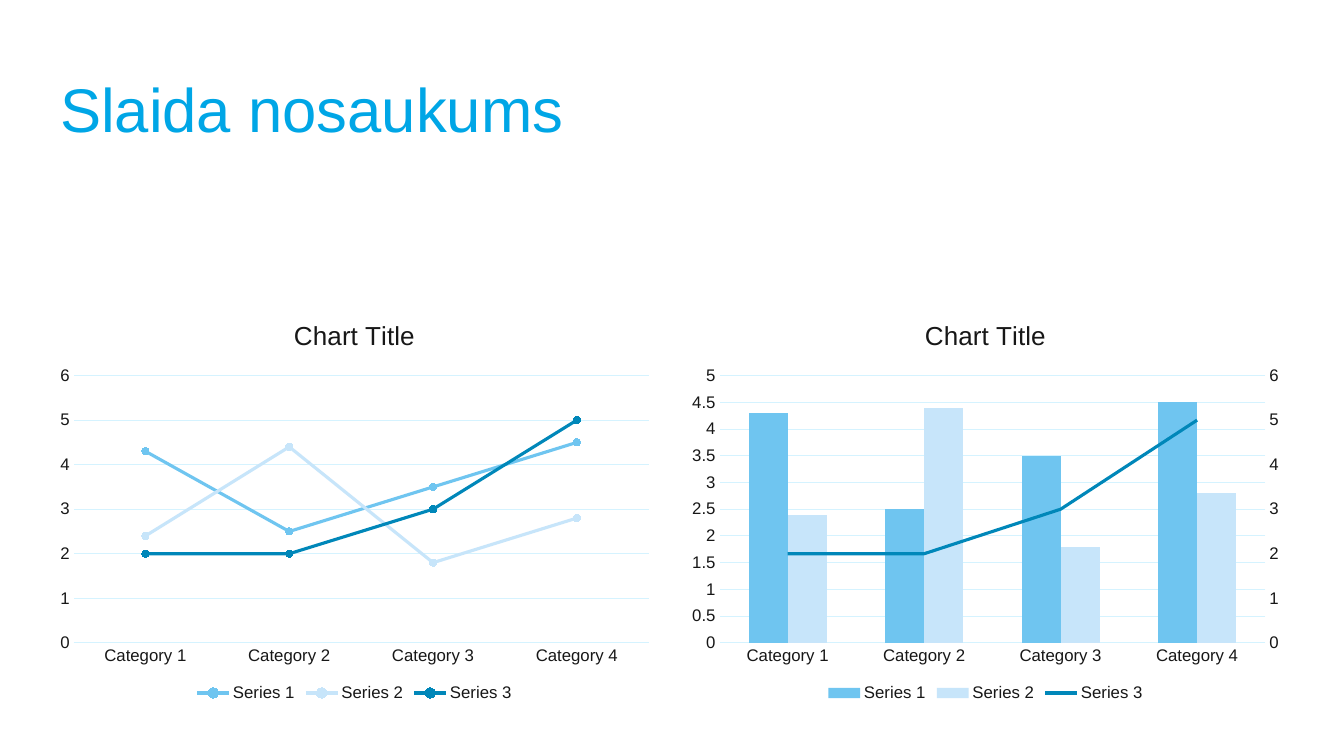
from copy import deepcopy

from lxml import etree
from pptx import Presentation
from pptx.chart.axis import CategoryAxis, ValueAxis
from pptx.chart.data import CategoryChartData
from pptx.dml.color import RGBColor
from pptx.enum.chart import XL_CHART_TYPE as CT
from pptx.enum.chart import XL_LEGEND_POSITION as LP
from pptx.enum.chart import XL_MARKER_STYLE as MS
from pptx.enum.chart import XL_TICK_MARK as TM
from pptx.enum.text import MSO_ANCHOR, PP_ALIGN
from pptx.oxml.ns import qn
from pptx.util import Pt

PX = 914400 / 100.8
FONT = "Arial"
COLORS = {"title": "00A6E6", "text": "171717", "grid": "D5F3FF"}
SERIES = {
    "Series 1": ("6FC5F0", (4.3, 2.5, 3.5, 4.5)),
    "Series 2": ("C7E5FA", (2.4, 4.4, 1.8, 2.8)),
    "Series 3": ("0087B9", (2, 2, 3, 5)),
}


def px(*lengths):
    return [round(n * PX) for n in lengths]


def put_text(tf, text, size, color, align=PP_ALIGN.LEFT, spacing=1.0):
    p = tf.paragraphs[0]
    p.alignment, p.line_spacing = align, spacing
    r = p.add_run()
    r.text = text
    r.font.name, r.font.size, r.font.bold = FONT, Pt(size), False
    r.font.color.rgb = RGBColor.from_string(COLORS[color])


prs = Presentation()
prs.slide_width, prs.slide_height = px(1344, 756)
s = prs.slides.add_slide(prs.slide_layouts[5])

# Title
sp = s.shapes.title
sp.left, sp.top, sp.width, sp.height = px(50, 40, 1243, 146)
sp.text_frame.vertical_anchor = MSO_ANCHOR.MIDDLE
put_text(sp.text_frame, "Slaida nosaukums", 44, "title", spacing=0.9)

# Chart data
data = CategoryChartData(number_format="General")
data.categories = [f"Category {n}" for n in range(1, 5)]
for name, (color, values) in SERIES.items():
    data.add_series(name, values)

# Line chart on the left, column chart on the right
charts = []
for kind, left, width, top_value, step in (
    (CT.LINE_MARKERS, 48, 613, 6, 1),
    (CT.COLUMN_CLUSTERED, 680, 611, 5, 0.5),
):
    chart = s.shapes.add_chart(kind, *px(left, 300, width, 406), data).chart
    charts.append(chart)
    chart.font.name, chart.font.size = FONT, Pt(12)
    chart.font.color.rgb = RGBColor.from_string(COLORS["text"])
    chart.has_title = True
    put_text(chart.chart_title.text_frame, "Chart Title", 18.6, "text", PP_ALIGN.CENTER)
    chart.has_legend = True
    chart.legend.position = LP.BOTTOM
    chart.legend.include_in_layout = False

    cat, val = chart.category_axis, chart.value_axis
    for axis in (cat, val):
        axis.major_tick_mark = axis.minor_tick_mark = TM.NONE
    val.minimum_scale, val.maximum_scale, val.major_unit = 0, top_value, step
    val.has_major_gridlines = True
    val.format.line.fill.background()
    for line in (cat.format.line, val.major_gridlines.format.line):
        line.width = Pt(0.75)
        line.color.rgb = RGBColor.from_string(COLORS["grid"])

# Series 3 of the column chart becomes a line on a second axis
column_chart = charts[1]
bars = column_chart.plots[0]
bars.vary_by_categories = False
bars.gap_width, bars.overlap = 150, 0
ser = bars.series[2]._element
bar_xml = ser.getparent()
for bar_only in ser.findall(qn("c:invertIfNegative")):
    ser.remove(bar_only)

line_xml = bar_xml.makeelement(qn("c:lineChart"))
bar_xml.addnext(line_xml)
etree.SubElement(line_xml, qn("c:grouping")).set("val", "standard")
etree.SubElement(line_xml, qn("c:varyColors")).set("val", "0")
line_xml.append(ser)
etree.SubElement(line_xml, qn("c:marker")).set("val", "1")

right_cat = deepcopy(column_chart.category_axis._element)
right_val = deepcopy(column_chart.value_axis._element)
column_chart.value_axis._element.addnext(right_val)
right_val.addnext(right_cat)
for axis_xml, own, other in ((right_cat, "5001", "5002"), (right_val, "5002", "5001")):
    axis_xml.find(qn("c:axId")).set("val", own)
    axis_xml.find(qn("c:crossAx")).set("val", other)
    etree.SubElement(line_xml, qn("c:axId")).set("val", own)
right_val.find(qn("c:axPos")).set("val", "r")
right_val.find(qn("c:crosses")).set("val", "max")
CategoryAxis(right_cat).visible = False
right_axis = ValueAxis(right_val)
right_axis.has_major_gridlines = False
right_axis.maximum_scale, right_axis.major_unit = 6, 1

# Series colours
for chart in charts:
    for plot in chart.plots:
        for series in plot.series:
            rgb = RGBColor.from_string(SERIES[series.name][0])
            if plot._element.tag == qn("c:barChart"):
                series.format.fill.solid()
                series.format.fill.fore_color.rgb = rgb
                continue
            series.smooth = False
            series.format.line.width = Pt(2.25)
            series.format.line.color.rgb = rgb
            marker = series.marker
            if chart is column_chart:
                marker.style = MS.NONE
                continue
            marker.style, marker.size = MS.CIRCLE, 5
            marker.format.fill.solid()
            marker.format.fill.fore_color.rgb = rgb
            marker.format.line.color.rgb = rgb

prs.save("out.pptx")
